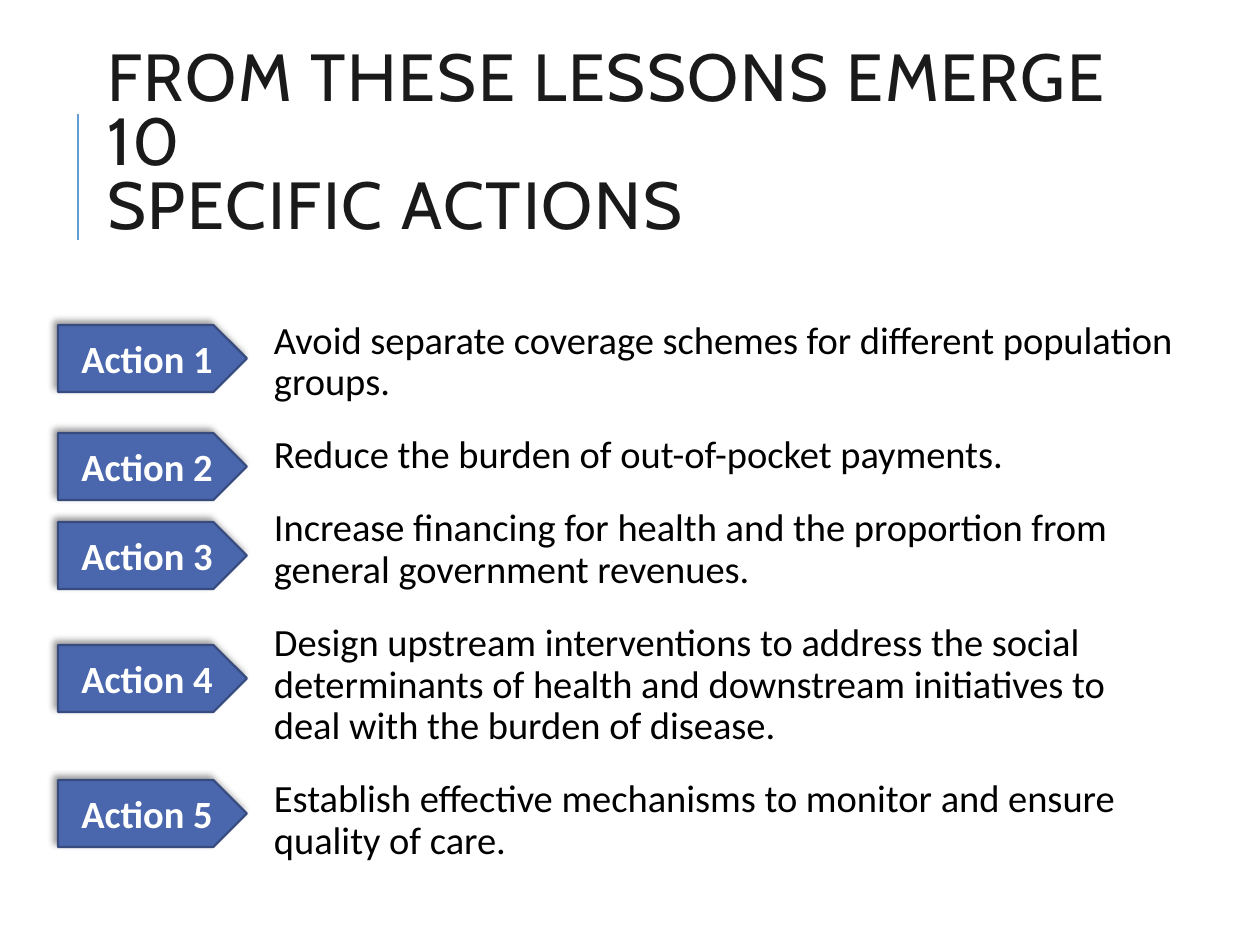
from lxml import etree
from pptx import Presentation
from pptx.dml.color import RGBColor
from pptx.enum.shapes import MSO_CONNECTOR, MSO_SHAPE
from pptx.enum.text import MSO_ANCHOR, PP_ALIGN
from pptx.oxml import parse_xml
from pptx.oxml.ns import nsdecls, qn
from pptx.util import Pt

PX = 914400 // 126
PENTAGON = MSO_SHAPE.PENTAGON
MIDDLE = MSO_ANCHOR.MIDDLE

WHITE = RGBColor(0xFF, 0xFF, 0xFF)
BLACK = RGBColor(0, 0, 0)
TITLE_GRAY = RGBColor(0x1A, 0x1A, 0x1A)
ACCENT = RGBColor(0x62, 0x9D, 0xD1)
BLUE = RGBColor(0x4A, 0x66, 0xAC)
DARK_BLUE = RGBColor(0x37, 0x4B, 0x7F)

SHADOW = f"""<a:effectLst {nsdecls('a')}>
  <a:outerShdw blurRad="50800" dist="38100" dir="13500000" algn="br" rotWithShape="0">
    <a:srgbClr val="000000"><a:alpha val="40000"/></a:srgbClr>
  </a:outerShdw>
</a:effectLst>"""

# Top of each arrow in px, and the action it labels
ACTIONS = [
    (325, "Avoid separate coverage schemes for different population groups."),
    (433, "Reduce the burden of out-of-pocket payments."),
    (522, "Increase financing for health and the proportion from general government revenues."),
    (645, "Design upstream interventions to address the social determinants of health "
          "and downstream initiatives to deal with the burden of disease."),
    (780, "Establish effective mechanisms to monitor and ensure quality of care."),
]


def set_font(paragraph, name, size, color, bold=False):
    font = paragraph.font
    font.name, font.size, font.bold = name, Pt(size), bold
    font.color.rgb = color


def set_margins(frame, left, top, right, bottom):
    frame.margin_left, frame.margin_top = left * PX, top * PX
    frame.margin_right, frame.margin_bottom = right * PX, bottom * PX


presentation = Presentation()
presentation.slide_width = 1260 * PX
presentation.slide_height = 945 * PX
slide = presentation.slides.add_slide(presentation.slide_layouts[6])
shapes = slide.shapes

# Accent line beside the title
rule = shapes.add_connector(MSO_CONNECTOR.STRAIGHT, 78 * PX, 240 * PX, 78 * PX, 114 * PX)
rule.line.color.rgb = ACCENT
rule.line.width = Pt(1.5)
etree.SubElement(rule._element.spPr, qn("a:effectLst"))

# Title
title = shapes.add_textbox(95 * PX, 43 * PX, 1108 * PX, 207 * PX).text_frame
title.word_wrap = True
title.vertical_anchor = MIDDLE
title.text = "FROM THESE LESSONS EMERGE 10 \vSPECIFIC ACTIONS"
paragraph = title.paragraphs[0]
paragraph.line_spacing = 0.8
set_font(paragraph, "Cabin", 38, TITLE_GRAY)
for run in paragraph.runs:
    run.font._element.set("spc", "100")

# Action descriptions
body = shapes.add_textbox(255 * PX, 315 * PX, 930 * PX, 554 * PX).text_frame
body.word_wrap = True
set_margins(body, 19, 6, 6, 6)
body.text = "\n".join(description for _, description in ACTIONS)
for paragraph in body.paragraphs:
    paragraph.line_spacing = 0.9
    paragraph.space_before = Pt(18)
    set_font(paragraph, "Calibri", 22, BLACK)

# Numbered arrows
for number, (top, _) in enumerate(ACTIONS, start=1):
    arrow = shapes.add_shape(PENTAGON, 58 * PX, top * PX, 189 * PX, 67 * PX)
    arrow.fill.solid()
    arrow.fill.fore_color.rgb = BLUE
    arrow.line.color.rgb = DARK_BLUE
    arrow.line.width = Pt(1.25)
    arrow._element.spPr.append(parse_xml(SHADOW))
    label = arrow.text_frame
    label.word_wrap = False
    label.vertical_anchor = MIDDLE
    set_margins(label, 6, 6, 0, 6)
    label.text = f"Action {number}"
    label.paragraphs[0].alignment = PP_ALIGN.CENTER
    set_font(label.paragraphs[0], "Calibri", 22, WHITE, bold=True)

presentation.save("out.pptx")
